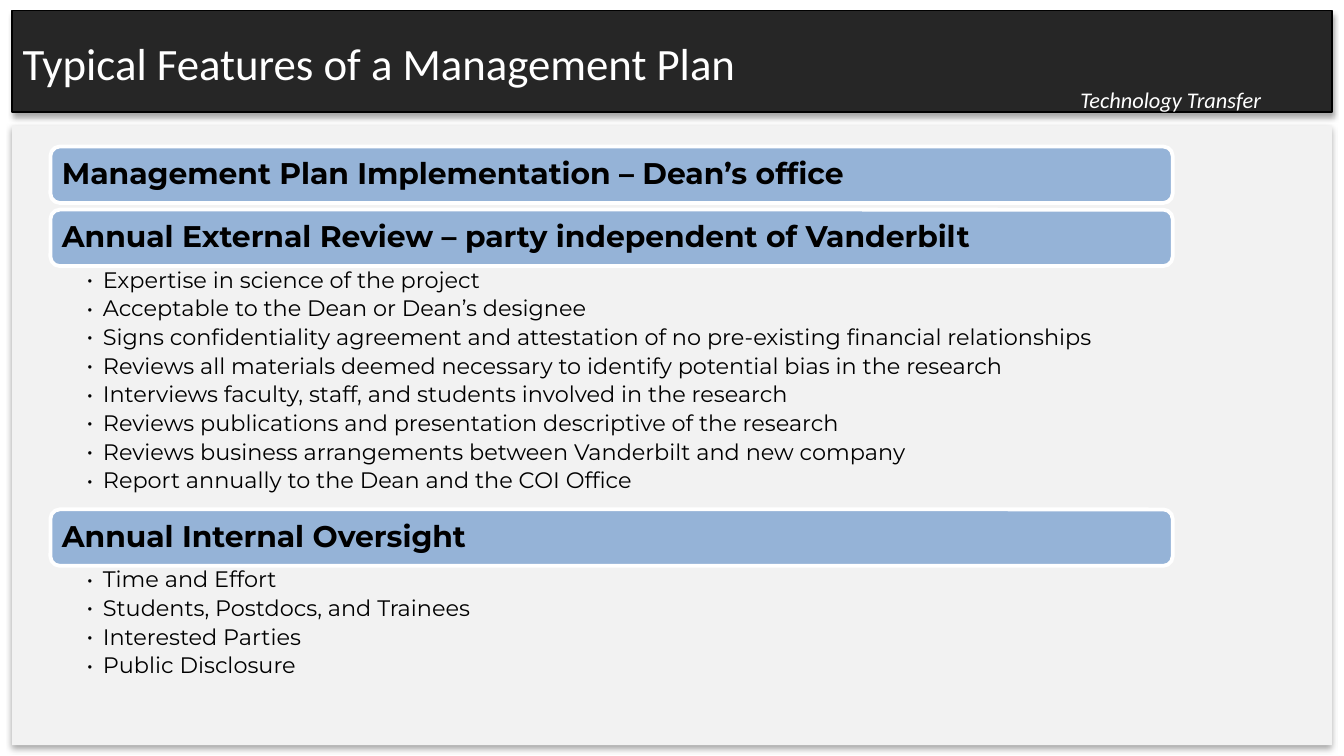
from lxml.etree import SubElement
from pptx import Presentation
from pptx.dml.color import RGBColor
from pptx.enum.shapes import MSO_SHAPE
from pptx.enum.text import MSO_ANCHOR, PP_ALIGN
from pptx.oxml.ns import qn
from pptx.util import Pt

PX = 4572  # 200 px to the inch
LEFT, WIDTH, BAR = 75, 1670, 84
COLORS = {"page": "FFFFFF", "panel": "F2F2F2", "band": "262626",
          "bar": "95B3D7", "ink": "000000"}
SECTIONS = [
    (218, "Management Plan Implementation – Dean’s office", []),
    (312, "Annual External Review – party independent of Vanderbilt", [
        "Expertise in science of the project",
        "Acceptable to the Dean or Dean’s designee",
        "Signs confidentiality agreement and attestation of no pre-existing financial relationships",
        "Reviews all materials deemed necessary to identify potential bias in the research",
        "Interviews faculty, staff, and students involved in the research",
        "Reviews publications and presentation descriptive of the research",
        "Reviews business arrangements between Vanderbilt and new company",
        "Report annually to the Dean and the COI Office"]),
    (758, "Annual Internal Oversight", [
        "Time and Effort",
        "Students, Postdocs, and Trainees",
        "Interested Parties",
        "Public Disclosure"]),
]


def style(font, name, size, color):
    font.name, font.size = name, Pt(size)
    font.color.rgb = RGBColor.from_string(COLORS[color])


deck = Presentation()
deck.slide_width, deck.slide_height = 2000 * PX, 1125 * PX
slide = deck.slides.add_slide(deck.slide_layouts[6])
shapes = slide.shapes
slide.background.fill.solid()
slide.background.fill.fore_color.rgb = RGBColor.from_string(COLORS["page"])

# Content panel and title band, both with a soft shadow below
for top, height, color in [(187, 922, "panel"), (16, 151, "band")]:
    panel = shapes.add_shape(MSO_SHAPE.RECTANGLE, 18 * PX, top * PX, 1964 * PX, height * PX)
    panel.fill.solid()
    panel.fill.fore_color.rgb = RGBColor.from_string(COLORS[color])
    if color == "band":
        panel.line.color.rgb = RGBColor.from_string(COLORS["ink"])
        panel.line.width = Pt(0.75)
    else:
        panel.line.fill.background()
    panel.shadow.inherit = False
    effects = panel.element.spPr.find(qn("a:effectLst"))
    shadow = SubElement(effects, qn("a:outerShdw"), blurRad="40000", dist="23000",
                        dir="5400000", rotWithShape="0")
    tint = SubElement(shadow, qn("a:srgbClr"), val=COLORS["ink"])
    SubElement(tint, qn("a:alpha"), val="35000")

# Unit name and slide title
for left, top, width, height, text, size, italic in [
        (1588, 118, 332, 62, "Technology Transfer", 12, True),
        (14, 0, 1294, 187, "Typical Features of a Management Plan", 24, False)]:
    frame = shapes.add_textbox(left * PX, top * PX, width * PX, height * PX).text_frame
    frame.word_wrap = True
    frame.vertical_anchor = MSO_ANCHOR.TOP if italic else MSO_ANCHOR.MIDDLE
    frame.text = text
    font = frame.paragraphs[0].runs[0].font
    style(font, "Calibri", size, "page")
    font.italic = italic

# Heading bars, each followed by its bullets
for top, heading, points in SECTIONS:
    bar = shapes.add_shape(MSO_SHAPE.ROUNDED_RECTANGLE, LEFT * PX, top * PX, WIDTH * PX, BAR * PX)
    bar.shadow.inherit = False
    bar.fill.solid()
    bar.fill.fore_color.rgb = RGBColor.from_string(COLORS["bar"])
    bar.line.color.rgb = RGBColor.from_string(COLORS["page"])
    bar.line.width = Pt(2)
    frame = bar.text_frame
    frame.word_wrap = True
    frame.vertical_anchor = MSO_ANCHOR.MIDDLE
    frame.margin_left = frame.margin_right = 13 * PX
    frame.text = heading
    para = frame.paragraphs[0]
    para.alignment = PP_ALIGN.LEFT
    para.line_spacing = 0.9
    font = para.runs[0].font
    style(font, "Montserrat", 16, "ink")
    font.bold = True

    if not points:
        continue
    height = 362 if len(points) > 4 else 182
    frame = shapes.add_textbox(LEFT * PX, (top + BAR) * PX, WIDTH * PX, height * PX).text_frame
    frame.word_wrap = True
    frame.margin_left, frame.margin_right = 54 * PX, 24 * PX
    frame.margin_top = frame.margin_bottom = 4 * PX
    frame.text = "\n".join(points)
    for para in frame.paragraphs:
        props = para._p.get_or_add_pPr()
        props.set("marL", str(24 * PX))
        props.set("indent", str(-24 * PX))
        SubElement(props, qn("a:buFont"), typeface="Montserrat")
        SubElement(props, qn("a:buChar"), char="•")
        para.level = 1
        para.line_spacing = 0.9
        para.space_after = Pt(2.4)
        style(para.runs[0].font, "Montserrat", 12, "ink")

deck.save("out.pptx")
